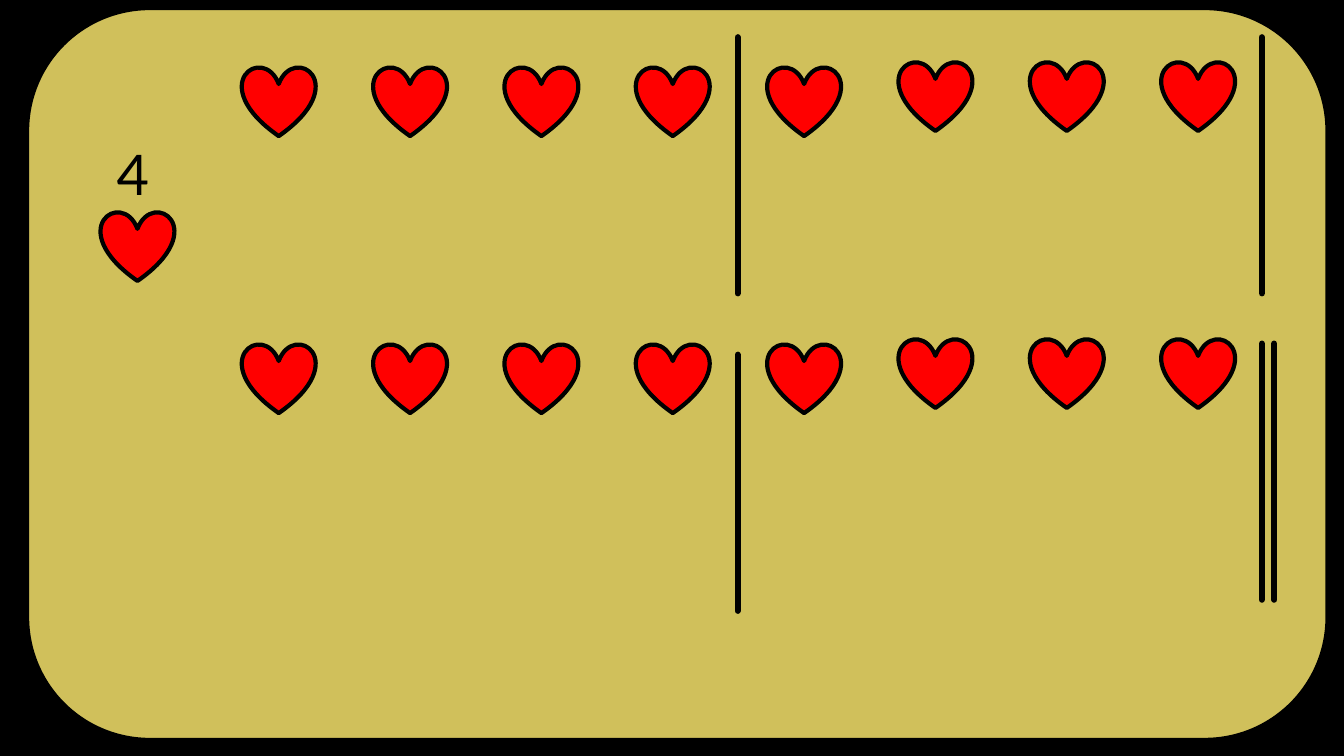
from lxml.etree import SubElement
from pptx import Presentation
from pptx.dml.color import RGBColor
from pptx.enum.shapes import MSO_CONNECTOR, MSO_SHAPE
from pptx.enum.text import MSO_AUTO_SIZE
from pptx.oxml.ns import qn
from pptx.util import Cm, Pt

COLORS = {"black": "000000", "card": "D0C05B", "heart": "FF0000"}
HEART_W, HEART_H = 1.85, 1.75
BEATS = 8
BEAT_LEFT, BEAT_STEP = 6.1, 3.31
ROW_TOPS = (1.68, 8.66)
RAISED_FROM, RAISE = 5, 0.13
BAR_HEIGHT = 6.45
BARS = ((18.59, 0.94), (31.8, 0.94), (18.59, 8.94), (31.8, 8.66), (32.11, 8.66))


def color(name):
    return RGBColor.from_string(COLORS[name])


def add_outlined(s, kind, x, y, w, h, fill, width):
    sp = s.shapes.add_shape(kind, Cm(x), Cm(y), Cm(w), Cm(h))
    sp.shadow.inherit = False
    sp.fill.solid()
    sp.fill.fore_color.rgb = color(fill)
    sp.line.color.rgb = color("black")
    sp.line.width = Pt(width)
    return sp


def add_heart(s, x, y):
    return add_outlined(s, MSO_SHAPE.HEART, x, y, HEART_W, HEART_H, "heart", 3)


def add_text(s, text, x, y, w, h, size=40, font="Lato", fill="black"):
    tf = s.shapes.add_textbox(Cm(x), Cm(y), Cm(w), Cm(h)).text_frame
    tf.word_wrap = True
    tf.auto_size = MSO_AUTO_SIZE.SHAPE_TO_FIT_TEXT
    r = tf.paragraphs[0].add_run()
    r.text = text
    r.font.size = Pt(size)
    r.font.name = font
    r.font.color.rgb = color(fill)


def add_bar(s, x, y):
    line = s.shapes.add_connector(
        MSO_CONNECTOR.STRAIGHT, Cm(x), Cm(y), Cm(x), Cm(y + BAR_HEIGHT))
    line.line.color.rgb = color("black")
    line.line.width = Pt(4.5)
    props = line._element.spPr
    props.find(qn("a:ln")).set("cap", "rnd")
    SubElement(props, qn("a:effectLst"))


def main():
    prs = Presentation()
    prs.slide_width, prs.slide_height = Cm(33.87), Cm(19.05)
    s = prs.slides.add_slide(prs.slide_layouts[6])
    s.background.fill.solid()
    s.background.fill.fore_color.rgb = color("black")

    add_outlined(s, MSO_SHAPE.ROUNDED_RECTANGLE, 0.71, 0.23, 32.72, 18.39, "card", 1.5)
    add_text(s, "4", 2.69, 3.4, 1.7, 1.98)
    add_heart(s, 2.54, 5.33)
    for top in ROW_TOPS:
        for beat in range(BEATS):
            y = top - RAISE if beat >= RAISED_FROM else top
            add_heart(s, BEAT_LEFT + beat * BEAT_STEP, y)
    for x, y in BARS:
        add_bar(s, x, y)

    prs.save("out.pptx")


if __name__ == "__main__":
    main()
